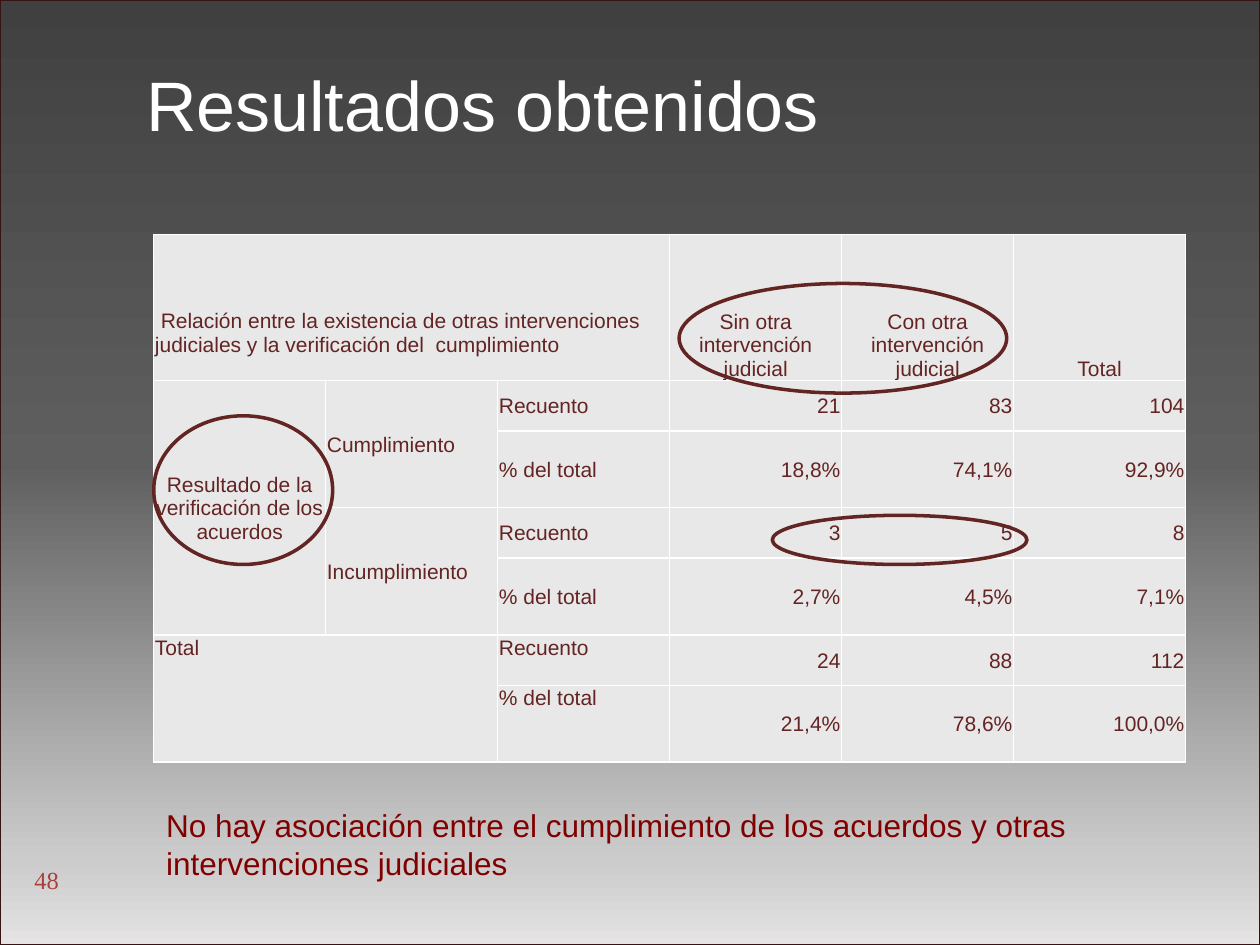
from copy import deepcopy
from dataclasses import dataclass

from pptx import Presentation
from pptx.dml.color import RGBColor
from pptx.enum.shapes import MSO_SHAPE as Preset
from pptx.enum.text import MSO_ANCHOR as Anchor, PP_ALIGN as Align
from pptx.oxml import parse_xml
from pptx.oxml.ns import nsdecls, qn
from pptx.util import Inches, Pt

WHITE = RGBColor(0xFF, 0xFF, 0xFF)
MAROON = RGBColor(0x80, 0x00, 0x00)
WINE = RGBColor(0x63, 0x25, 0x23)
TABLE_TEXT = RGBColor(0x63, 0x24, 0x23)
CELL_GREY = RGBColor(0xE9, 0xE8, 0xE8)
PAGE_RED = RGBColor(0xA9, 0x42, 0x3D)
FRAME_BROWN = RGBColor(0x37, 0x14, 0x13)
BACKDROP = [
    (0, RGBColor(0x40, 0x40, 0x40)),
    (0.49, RGBColor(0x5F, 0x5F, 0x5F)),
    (0.91, RGBColor(0xCC, 0xCC, 0xCC)),
    (1, RGBColor(0xE5, 0xE3, 0xE3)),
]
SLIDE_W, SLIDE_H = Inches(10), Inches(7.5)


@dataclass
class Area:
    """Percentages of the slide's width and height."""
    left: float
    top: float
    width: float
    height: float

    def emu(self) -> tuple[int, int, int, int]:
        return (int(SLIDE_W * self.left / 100), int(SLIDE_H * self.top / 100),
                int(SLIDE_W * self.width / 100), int(SLIDE_H * self.height / 100))


@dataclass
class Label:
    text: str
    row: int
    col: int
    rows: int = 1
    cols: int = 1
    align: Align = Align.LEFT
    anchor: Anchor = Anchor.MIDDLE
    bottom: float = 0


FRAME = Area(0, 0, 100, 100)
TITLE = Area(10.6, 5.87, 56, 10.27)
TABLE = Area(12.2, 24.8, 81.9, 55.87)
CONCLUSION = Area(12.2, 84.67, 85.1, 9.47)
PAGE_NUMBER = Area(2, 89.73, 5, 6.67)
HIGHLIGHTS = [
    Area(12.2, 44, 14.2, 15.73),
    Area(53.9, 30, 26, 11.6),
    Area(61.3, 54.53, 20.2, 5.2),
]
ROW_HEIGHTS = [1.16] + [0.4, 0.61] * 3
COLUMNS = 6
FIRST_VALUE_COL = 3

HEADINGS = ["Sin otra intervención judicial", "Con otra intervención judicial", "Total"]
VALUES = [
    ["21", "83", "104"],
    ["18,8%", "74,1%", "92,9%"],
    ["3", "5", "8"],
    ["2,7%", "4,5%", "7,1%"],
    ["24", "88", "112"],
    ["21,4%", "78,6%", "100,0%"],
]
LABELS = [
    Label(" Relación entre la existencia de otras intervenciones judiciales "
          "y la verificación del  cumplimiento", 0, 0, cols=3,
          anchor=Anchor.BOTTOM, bottom=0.19),
    Label("Resultado de la verificación de los acuerdos", 1, 0, rows=4, align=Align.CENTER),
    Label("Cumplimiento", 1, 1, rows=2),
    Label("Incumplimiento", 3, 1, rows=2),
    Label("Total", 5, 0, rows=2, cols=2, anchor=Anchor.TOP),
]


def table_labels() -> list[Label]:
    labels = list(LABELS)
    for col, heading in enumerate(HEADINGS, FIRST_VALUE_COL):
        labels.append(Label(heading, 0, col, align=Align.CENTER, anchor=Anchor.BOTTOM))
    for row, values in enumerate(VALUES, 1):
        measure = "Recuento" if row % 2 else "% del total"
        labels.append(Label(measure, row, 2, anchor=Anchor.TOP if row > 4 else Anchor.MIDDLE))
        for col, value in enumerate(values, FIRST_VALUE_COL):
            labels.append(Label(value, row, col, align=Align.RIGHT))
    return labels


def write(frame, text: str, size: float, color: RGBColor,
          font: str = "Arial", align: Align = Align.LEFT) -> None:
    frame.text = text
    for paragraph in frame.paragraphs:
        paragraph.alignment = align
        for run in paragraph.runs:
            run.font.name = font
            run.font.size = Pt(size)
            run.font.bold = False
            run.font.color.rgb = color


def paint_backdrop(slide) -> None:
    fill = slide.background.fill
    fill.gradient()
    fill.gradient_angle = 270
    stop_list = slide.element.find(".//" + qn("a:gsLst"))
    while len(stop_list) < len(BACKDROP):
        stop_list.append(deepcopy(stop_list[0]))
    for stop, (position, color) in zip(fill.gradient_stops, BACKDROP):
        stop.position = position
        stop.color.rgb = color


def add_outline(slide, preset: Preset, area: Area, color: RGBColor, weight: float) -> None:
    outline = slide.shapes.add_shape(preset, *area.emu())
    outline.shadow.inherit = False
    outline.fill.background()
    outline.line.color.rgb = color
    outline.line.width = Pt(weight)


def add_page_number(slide) -> None:
    badge = slide.shapes.add_shape(Preset.OVAL, *PAGE_NUMBER.emu())
    badge.shadow.inherit = False
    badge.fill.background()
    badge.line.fill.background()
    frame = badge.text_frame
    frame.margin_left = frame.margin_right = frame.margin_top = frame.margin_bottom = 0
    frame.vertical_anchor = Anchor.MIDDLE
    write(frame, "48", 14, PAGE_RED, "Times New Roman")


def style_cell(cell) -> None:
    properties = cell._tc.get_or_add_tcPr()
    for side in ("lnL", "lnR", "lnT", "lnB"):
        properties.append(parse_xml(
            f'<a:{side} {nsdecls("a")} w="{Pt(1)}"><a:solidFill>'
            f'<a:srgbClr val="{WHITE}"/></a:solidFill></a:{side}>'))
    cell.fill.solid()
    cell.fill.fore_color.rgb = CELL_GREY
    cell.margin_left = cell.margin_right = cell.margin_top = Inches(0.01)
    cell.margin_bottom = 0


def add_results(slide) -> None:
    table = slide.shapes.add_table(len(ROW_HEIGHTS), COLUMNS, *TABLE.emu()).table
    table.first_row = table.horz_banding = False
    for row, height in zip(table.rows, ROW_HEIGHTS):
        row.height = Inches(height)
    for cell in table.iter_cells():
        style_cell(cell)
    for label in table_labels():
        cell = table.cell(label.row, label.col)
        if label.rows * label.cols > 1:
            cell.merge(table.cell(label.row + label.rows - 1, label.col + label.cols - 1))
        cell.vertical_anchor = label.anchor
        cell.margin_bottom = Inches(label.bottom)
        write(cell.text_frame, label.text, 12, TABLE_TEXT, align=label.align)


def main() -> None:
    deck = Presentation()
    deck.slide_width, deck.slide_height = SLIDE_W, SLIDE_H
    slide = deck.slides.add_slide(deck.slide_layouts[5])
    paint_backdrop(slide)
    add_outline(slide, Preset.RECTANGLE, FRAME, FRAME_BROWN, 1)

    title = slide.shapes.title
    title.left, title.top, title.width, title.height = TITLE.emu()
    title.text_frame.vertical_anchor = Anchor.TOP
    write(title.text_frame, "Resultados obtenidos", 40, WHITE)

    add_page_number(slide)
    add_results(slide)
    for area in HIGHLIGHTS:
        add_outline(slide, Preset.OVAL, area, WINE, 2)

    conclusion = slide.shapes.add_textbox(*CONCLUSION.emu()).text_frame
    conclusion.word_wrap = True
    write(conclusion, "No hay asociación entre el cumplimiento de los acuerdos "
                      "y otras intervenciones judiciales", 18, MAROON)
    deck.save("out.pptx")


if __name__ == "__main__":
    main()
